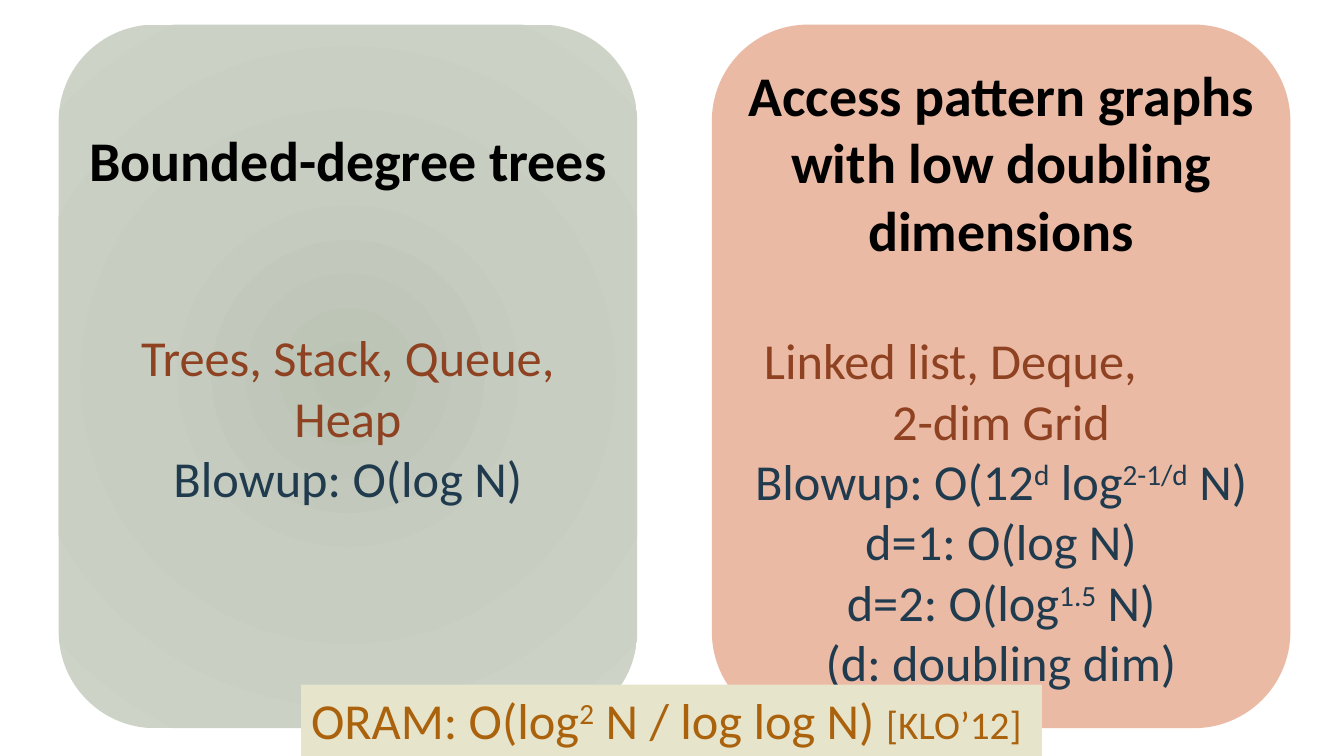
from dataclasses import dataclass

from pptx import Presentation
from pptx.dml.color import RGBColor
from pptx.enum.shapes import MSO_SHAPE
from pptx.enum.text import MSO_ANCHOR, MSO_AUTO_SIZE, PP_ALIGN
from pptx.oxml import parse_xml
from pptx.oxml.ns import nsdecls
from pptx.util import Cm, Pt

ROUNDED = MSO_SHAPE.ROUNDED_RECTANGLE
RECTANGLE = MSO_SHAPE.RECTANGLE
MIDDLE = MSO_ANCHOR.MIDDLE
TOP = MSO_ANCHOR.TOP
GROW = MSO_AUTO_SIZE.SHAPE_TO_FIT_TEXT
CENTER = PP_ALIGN.CENTER
LEFT = PP_ALIGN.LEFT


@dataclass(frozen=True)
class Theme:
    font: str = "Calibri"
    title: str = "000000"
    examples: str = "8E4221"
    bounds: str = "203A4E"
    oram: str = "AB620D"
    doubling_fill: str = "EABAA5"
    oram_fill: str = "E7E4CC"
    tree_stops: tuple = ((0, "BBC3B5"), (45, "C7CDC1"), (100, "CDD4C7"))
    title_size: float = 40
    body_size: float = 36
    cite_size: float = 28
    blank_title_line: float = 47.8


THEME = Theme()


def add_panel(page, kind, left, top, width, height, color=None):
    panel = page.shapes.add_shape(kind, Cm(left), Cm(top), Cm(width), Cm(height))
    panel.shadow.inherit = False
    panel.line.fill.background()
    if color:
        panel.fill.solid()
        panel.fill.fore_color.rgb = RGBColor.from_string(color)
    return panel


def fill_radial(panel, stops):
    panel.fill.background()
    stop_xml = "".join(
        f'<a:gs pos="{place * 1000}"><a:srgbClr val="{color}"/></a:gs>'
        for place, color in stops
    )
    gradient = parse_xml(
        f'<a:gradFill {nsdecls("a")} rotWithShape="1"><a:gsLst>{stop_xml}</a:gsLst>'
        '<a:path path="circle"><a:fillToRect l="100000" t="100000" r="100000" b="100000"/>'
        "</a:path></a:gradFill>"
    )
    properties = panel._element.spPr
    empty_fill = properties.find("./{*}noFill")
    properties.replace(empty_fill, gradient)


def set_frame(panel, bottom=0.13):
    frame = panel.text_frame
    frame.word_wrap = True
    frame.vertical_anchor = MIDDLE
    frame.margin_left = frame.margin_right = 0
    frame.margin_top = Cm(0.13)
    frame.margin_bottom = Cm(bottom)


def add_span(para, text, size, color, bold=False, raised=False):
    span = para.add_run()
    span.text = text
    span.font.name = THEME.font
    span.font.size = Pt(size)
    span.font.bold = bold
    span.font.color.rgb = RGBColor.from_string(color)
    if raised:
        span._r.get_or_add_rPr().set("baseline", "30000")


def add_formula(para, parts, color):
    for index, text in enumerate(parts):
        add_span(para, text, THEME.body_size, color, raised=index % 2 == 1)


def add_title(panel, text):
    para = panel.text_frame.paragraphs[0]
    para.alignment = CENTER
    add_span(para, text, THEME.title_size, THEME.title, bold=True)


def add_line(panel, parts, color, blank_lines=0, right_indent=0):
    para = panel.text_frame.add_paragraph()
    para.alignment = CENTER
    para.space_before = Pt(blank_lines * THEME.blank_title_line)
    layout = para._p.get_or_add_pPr()
    layout.set("marL", "0")
    layout.set("marR", str(int(Cm(right_indent))))
    layout.set("indent", "0")
    add_formula(para, parts, color)


def add_tree_panel(page):
    panel = add_panel(page, ROUNDED, 1.48, 0.62, 14.58, 17.73)
    fill_radial(panel, THEME.tree_stops)
    set_frame(panel, bottom=3.15)
    add_title(panel, "Bounded-degree trees")
    add_line(panel, ["Trees, Stack, Queue, Heap"], THEME.examples, blank_lines=2)
    add_line(panel, ["Blowup: O(log N)"], THEME.bounds)


def add_doubling_panel(page):
    panel = add_panel(page, ROUNDED, 17.94, 0.62, 14.58, 17.73, THEME.doubling_fill)
    set_frame(panel)
    add_title(panel, "Access pattern graphs with low doubling dimensions")
    add_line(panel, ["Linked list, Deque,"], THEME.examples, blank_lines=1, right_indent=2.55)
    add_line(panel, ["2-dim Grid"], THEME.examples)
    for parts in (
        ["Blowup: O(12", "d", " log", "2-1/d", " N)"],
        ["d=1: O(log N)"],
        ["d=2: O(log", "1.5", " N)"],
        ["(d: doubling dim)"],
    ):
        add_line(panel, parts, THEME.bounds)


def add_oram_bar(page):
    bar = add_panel(page, RECTANGLE, 7.59, 17.25, 18.67, 1.8, THEME.oram_fill)
    frame = bar.text_frame
    frame.word_wrap = False
    frame.auto_size = GROW
    frame.vertical_anchor = TOP
    para = frame.paragraphs[0]
    para.alignment = LEFT
    add_formula(para, ["ORAM: O(log", "2", " N / log log N) "], THEME.oram)
    add_span(para, "[KLO’12]", THEME.cite_size, THEME.oram)


def main():
    deck = Presentation()
    deck.slide_width = Cm(33.87)
    deck.slide_height = Cm(19.05)
    page = deck.slides.add_slide(deck.slide_layouts[6])
    add_tree_panel(page)
    add_doubling_panel(page)
    add_oram_bar(page)
    deck.save("out.pptx")


if __name__ == "__main__":
    main()
